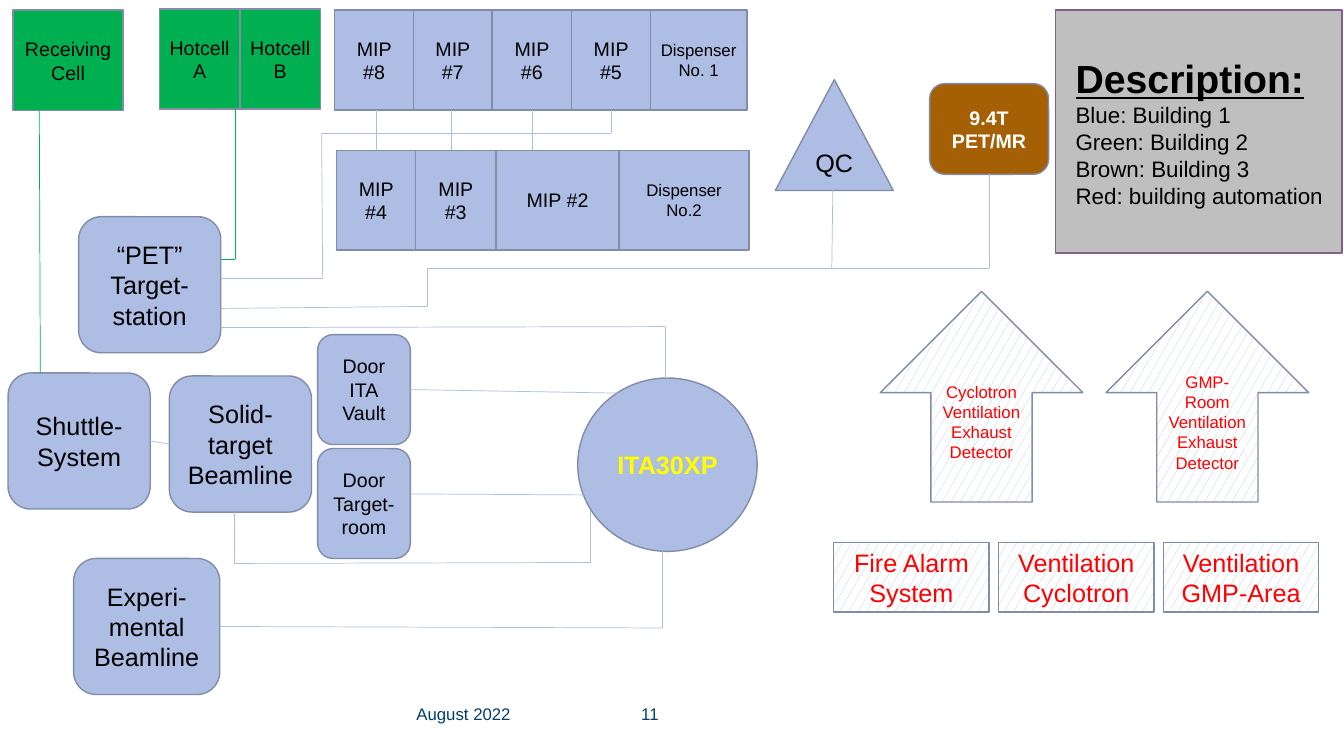
from lxml import etree
from pptx import Presentation
from pptx.dml.color import RGBColor
from pptx.enum.dml import MSO_PATTERN
from pptx.enum.shapes import MSO_CONNECTOR, MSO_SHAPE
from pptx.enum.text import MSO_ANCHOR, PP_ALIGN
from pptx.oxml.ns import qn
from pptx.util import Inches, Pt

RECTANGLE, ROUNDED = MSO_SHAPE.RECTANGLE, MSO_SHAPE.ROUNDED_RECTANGLE
TRIANGLE, OVAL, UP_ARROW = MSO_SHAPE.ISOSCELES_TRIANGLE, MSO_SHAPE.OVAL, MSO_SHAPE.UP_ARROW
STRAIGHT, CONFETTI = MSO_CONNECTOR.STRAIGHT, MSO_PATTERN.SMALL_CONFETTI
MIDDLE, CENTER, LEFT = MSO_ANCHOR.MIDDLE, PP_ALIGN.CENTER, PP_ALIGN.LEFT
TOP_SIDE, LEFT_SIDE, BOTTOM_SIDE, RIGHT_SIDE = range(4)

FONT = "Arial"
COLORS = {
    "blue": "ADBDE3", "green": "00B050", "brown": "A55F05", "grey": "BFBFBF",
    "outline": "808CA8", "purple": "816089", "black": "000000", "white": "FFFFFF",
    "yellow": "FFFF00", "red": "FF0000", "navy": "023D6B",
}

CELL_ROWS = [
    (0.13, 0.1, 1, "green", [("Receiving Cell", 1.09, 14)]),
    (1.58, 0.09, 0.99, "green", [("Hotcell A", 0.8, 14), ("Hotcell B", 0.8, 14)]),
    (3.32, 0.1, 0.99, "blue", [("MIP #8", 0.78, 14), ("MIP #7", 0.78, 14), ("MIP #6", 0.79, 14),
                               ("MIP #5", 0.78, 14), ("Dispenser No. 1", 0.96, 12)]),
    (3.34, 1.49, 0.99, "blue", [("MIP #4", 0.78, 14), ("MIP #3", 0.8, 14),
                                ("MIP #2", 1.22, 14), ("Dispenser No.2", 1.29, 12)]),
]

STATIONS = {
    "qc": (TRIANGLE, (7.69, 0.79, 1.17, 1.1), "QC", 18, "blue", "black", False),
    "scanner": (ROUNDED, (9.22, 0.83, 1.18, 0.9), "9.4T PET/MR", 14, "brown", "white", True),
    "target": (ROUNDED, (0.78, 2.15, 1.41, 1.35), "“PET”\nTarget-station", 18, "blue", "black", False),
    "cyclotron": (OVAL, (5.73, 3.75, 1.78, 1.72), "ITA30XP", 18, "blue", "yellow", True),
    "solid": (ROUNDED, (1.68, 3.73, 1.41, 1.35), "Solid-target\nBeamline", 18, "blue", "black", False),
    "experimental": (ROUNDED, (0.73, 5.54, 1.45, 1.35), "Experi-mental\nBeamline", 18, "blue", "black", False),
    "target door": (ROUNDED, (3.15, 4.45, 0.92, 1.09), "Door Target-\nroom", 14, "blue", "black", False),
    "vault door": (ROUNDED, (3.15, 3.32, 0.92, 1.09), "Door\nITA\nVault", 14, "blue", "black", False),
    "shuttle": (ROUNDED, (0.08, 3.7, 1.41, 1.35), "Shuttle-\nSystem", 18, "blue", "black", False),
}

ROUTES = [
    ("green", [(0.39, 1.1), (0.4, 3.7)], None, None),
    ("green", [(2.33, 1.08), (2.33, 2.57), (2.19, 2.57)], None, None),
    ("blue", [(3.73, 1.09), (3.73, 1.49)], None, None),
    ("blue", [(4.48, 1.09), (4.48, 1.49)], None, None),
    ("blue", [(5.28, 1.09), (5.28, 1.49)], None, None),
    ("blue", [(6.06, 1.09), (6.06, 1.32), (3.19, 1.32), (3.2, 2.76), (2.19, 2.76)], None, None),
    ("blue", [(9.81, 1.73), (9.81, 2.66), (4.24, 2.66), (4.24, 3.04), (2.19, 3.06)],
     ("scanner", BOTTOM_SIDE), None),
    ("blue", [(8.26, 1.89), (8.25, 2.66)], None, None),
    ("blue", [(2.19, 3.25), (6.6, 3.24), (6.6, 3.75)], None, None),
    ("blue", [(4.07, 3.87), (6.15, 3.9)], ("vault door", RIGHT_SIDE), None),
    ("blue", [(4.07, 4.9), (5.79, 4.91)], None, None),
    ("blue", [(2.32, 5.08), (2.32, 5.59), (5.86, 5.58), (5.86, 5.06)], None, None),
    ("blue", [(2.18, 6.22), (6.57, 6.23), (6.57, 5.47)], ("experimental", RIGHT_SIDE), None),
    ("blue", [(1.49, 4.38), (1.68, 4.4)], ("shuttle", RIGHT_SIDE), ("solid", LEFT_SIDE)),
]

DETECTORS = ["Cyclotron\nVentilation\nExhaust\nDetector", "GMP-Room\nVentilation\nExhaust\nDetector"]
SYSTEMS = ["Fire Alarm System", "Ventilation Cyclotron", "Ventilation GMP-Area"]
LEGEND = "Description:\nBlue: Building 1\nGreen: Building 2\nBrown: Building 3\nRed: building automation"
FOOTER = [("August 2022", 4.13, 1.75), ("11", 6.36, 0.79)]


def color(name):
    return RGBColor.from_string(COLORS[name])


def format_text(text_frame, size, font_color, bold=False, alignment=CENTER):
    for paragraph in text_frame.paragraphs:
        paragraph.alignment = alignment
        for run in paragraph.runs:
            run.font.name = FONT
            run.font.size = Pt(size)
            run.font.bold = bold
            run.font.color.rgb = color(font_color)


def add_box(slide, kind, box, text, size, fill, font_color="black", bold=False,
            outline="outline", alignment=CENTER):
    shape = slide.shapes.add_shape(kind, *map(Inches, box))
    shape.shadow.inherit = False
    if fill == "hatched":
        shape.fill.patterned()
        shape.fill.pattern = CONFETTI
        shape.fill.fore_color.rgb = color("blue")
        shape.fill.back_color.rgb = color("white")
    else:
        shape.fill.solid()
        shape.fill.fore_color.rgb = color(fill)
    shape.line.color.rgb = color(outline)
    shape.line.width = Pt(1)
    shape.text_frame.text = text
    shape.text_frame.word_wrap = True
    shape.text_frame.vertical_anchor = MIDDLE
    format_text(shape.text_frame, size, font_color, bold, alignment)
    return shape


def add_route(slide, stations, line_color, points, start, end):
    connectors = []
    for first, second in zip(points, points[1:]):
        connector = slide.shapes.add_connector(STRAIGHT, *map(Inches, first + second))
        connector.line.color.rgb = color(line_color)
        connector.line.width = Pt(0.5)
        etree.SubElement(connector._element.spPr, qn("a:effectLst"))
        connectors.append(connector)
    if start:
        connectors[0].begin_connect(stations[start[0]], start[1])
    if end:
        connectors[-1].end_connect(stations[end[0]], end[1])


def add_legend(slide):
    legend = add_box(slide, RECTANGLE, (10.47, 0.1, 2.84, 2.41), LEGEND, 16, "grey",
                     outline="purple", alignment=LEFT)
    for paragraph in legend.text_frame.paragraphs:
        paragraph._p.get_or_add_pPr().set("marL", str(Inches(0.1)))
    heading = legend.text_frame.paragraphs[0].runs[0].font
    heading.size, heading.bold, heading.underline = Pt(28), True, True


def add_footer(slide):
    for text, left, width in FOOTER:
        text_box = slide.shapes.add_textbox(*map(Inches, (left, 6.98, width, 0.24)))
        text_frame = text_box.text_frame
        text_frame.margin_left = text_frame.margin_right = 0
        text_frame.margin_top = text_frame.margin_bottom = 0
        text_frame.word_wrap = True
        text_frame.text = text
        format_text(text_frame, 12, "navy", alignment=LEFT)


def main():
    presentation = Presentation()
    presentation.slide_width, presentation.slide_height = Inches(13.33), Inches(7.5)
    slide = presentation.slides.add_slide(presentation.slide_layouts[6])

    for left, top, height, fill, cells in CELL_ROWS:
        for text, width, size in cells:
            add_box(slide, RECTANGLE, (left, top, width, height), text, size, fill)
            left += width

    stations = {name: add_box(slide, *details) for name, details in STATIONS.items()}
    for route in ROUTES:
        add_route(slide, stations, *route)

    add_legend(slide)
    for index, text in enumerate(DETECTORS):
        add_box(slide, UP_ARROW, (8.73 + 2.24 * index, 2.89, 2.01, 2.09), text, 12, "hatched", "red")
    for index, text in enumerate(SYSTEMS):
        add_box(slide, RECTANGLE, (8.27 + 1.635 * index, 5.38, 1.54, 0.69), text, 18, "hatched", "red")
    add_footer(slide)
    presentation.save("out.pptx")


if __name__ == "__main__":
    main()
